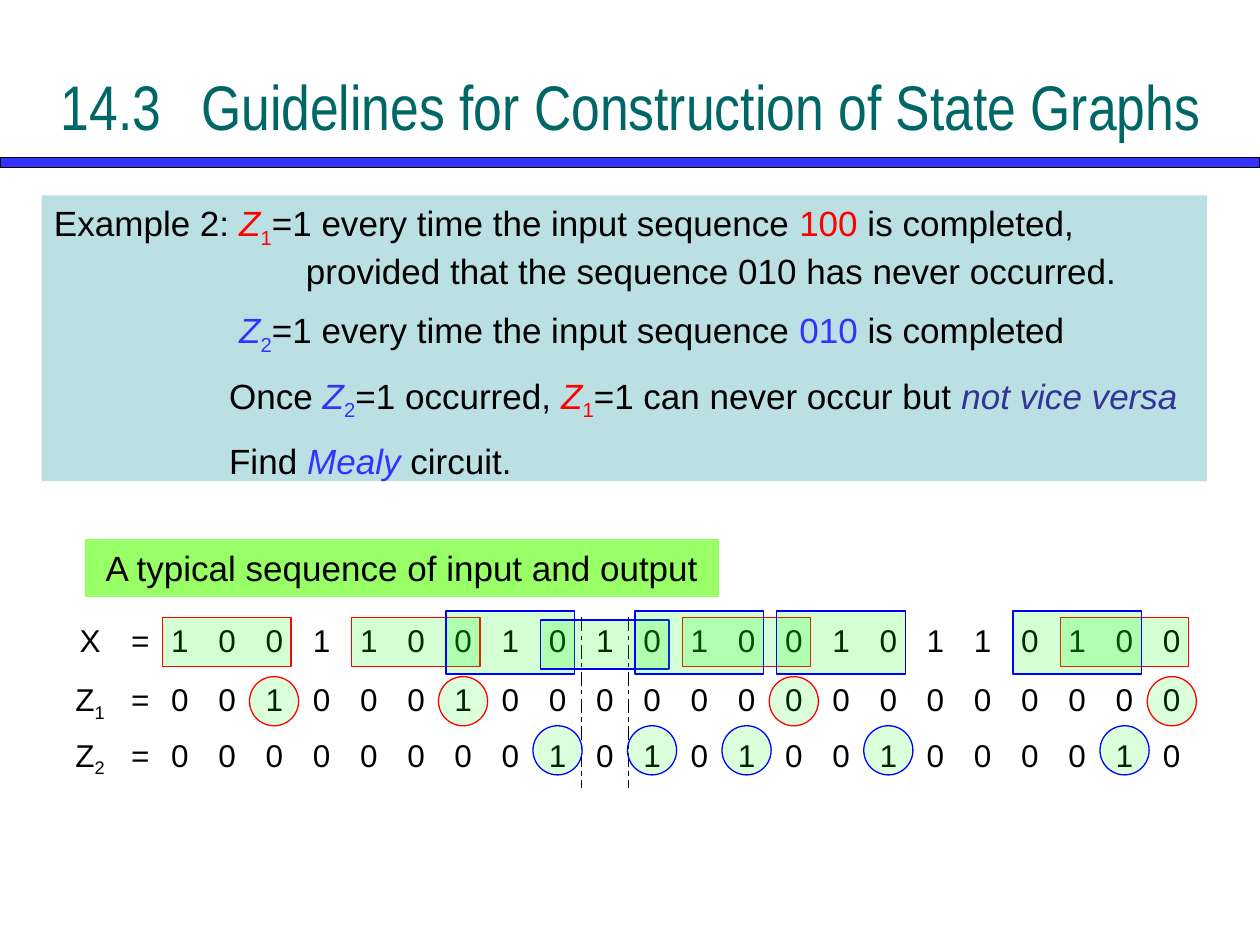
from lxml.etree import SubElement
from pptx import Presentation
from pptx.dml.color import RGBColor
from pptx.enum.shapes import MSO_SHAPE
from pptx.enum.text import MSO_ANCHOR, PP_ALIGN
from pptx.oxml import parse_xml
from pptx.oxml.ns import qn
from pptx.util import Inches, Pt

COLORS = {
    "black": "000000", "white": "FFFFFF", "teal": "006666", "bar": "3333FF",
    "panel": "BBE0E3", "label": "99FF66", "mark": "00FF00", "red": "FF0000",
    "blue": "0000FF", "indigo": "333399",
}
COLS, ROWS = 100, 75
UNIT = Inches(0.1)
BODY = {"name": "Arial", "size": Pt(20)}
DIGIT = {"name": "Arial", "size": Pt(18)}
TITLE = {"name": "Arial Narrow", "size": Pt(36)}

Z1 = [("Z", "red", "i"), ("1", "red", "sub")]
Z2 = [("Z", "bar", "i"), ("2", "bar", "sub")]
EXAMPLE = [
    (20, -20, 0, [("Example 2: ",), *Z1, ("=1 every time the input sequence ",), ("100", "red"),
                  (" is completed,\vprovided that the sequence 010 has never occurred.",)]),
    (14.7, 0, 10, [*Z2, ("=1 every time the input sequence ",), ("010", "bar"), (" is completed",)]),
    (13.9, 0, 10, [("Once ",), *Z2, ("=1 occurred, ",), *Z1, ("=1 can never occur but ",),
                   ("not vice versa", "indigo", "i")]),
    (13.9, 0, 10, [("Find ",), ("Mealy", "bar", "i"), (" circuit.",)]),
]
X = "1001100101010010110100"
SEQUENCES = [
    ([("X",)], X),
    ([("Z",), ("1", "black", "sub")], "0010001000000000000000"),
    ([("Z",), ("2", "black", "sub")], "0000000010101001000010"),
]
TABLE_LEFT, TABLE_TOP = 4.9, 49
HEAD_WIDTHS, STEP = [4.5, 3], 3.75
ROW_HEIGHTS = [4.7, 4, 4]
SPLIT = 10


def rgb(name):
    """Return the named colour."""
    return RGBColor.from_string(COLORS[name])


def grid(*lengths):
    """Turn grid units into slide lengths."""
    return [round(n * UNIT) for n in lengths]


def add_runs(p, runs, fmt):
    """Add (text, colour, style) runs to a paragraph."""
    for text, color, style in ((*run, "black", "")[:3] if len(run) == 1 else (*run, "")[:3] for run in runs):
        for i, part in enumerate(text.split("\v")):
            if i:
                p.add_line_break()
            r = p.add_run()
            r.text = part
            for key, value in {**fmt, "italic": style == "i"}.items():
                setattr(r.font, key, value)
            r.font.color.rgb = rgb(color)
            if style == "sub":
                r.font._element.set("baseline", "-25000")


def add_box(s, at, fill, line=None, kind=MSO_SHAPE.RECTANGLE, alpha=None):
    """Add a filled shape, see-through if alpha is given."""
    sp = s.shapes.add_shape(kind, *grid(*at))
    sp.shadow.inherit = False
    sp.fill.solid()
    sp.fill.fore_color.rgb = rgb(fill)
    if alpha:
        color = sp._element.spPr.find(qn("a:solidFill"))[0]
        SubElement(color, qn("a:alpha")).set("val", str(alpha * 1000))
    if line:
        sp.line.color.rgb = rgb(line)
        sp.line.width = Pt(0.75)
    else:
        sp.line.fill.background()
    return sp


def set_text(sp, runs, fmt, wrap=True):
    """Put one centred line of text in a shape."""
    tf = sp.text_frame
    for key, value in {"word_wrap": wrap, "vertical_anchor": MSO_ANCHOR.MIDDLE}.items():
        setattr(tf, key, value)
    p = tf.paragraphs[0]
    p.alignment = PP_ALIGN.CENTER
    add_runs(p, runs, fmt)


def add_example(s):
    """Add the panel that states the problem."""
    tf = add_box(s, (3.3, 15.5, 92.5, 22.7), "panel").text_frame
    for key, value in {"word_wrap": True, "vertical_anchor": MSO_ANCHOR.TOP}.items():
        setattr(tf, key, value)
    for i, (margin, indent, before, runs) in enumerate(EXAMPLE):
        p = tf.add_paragraph() if i else tf.paragraphs[0]
        p.alignment = PP_ALIGN.LEFT
        p.space_before = Pt(before)
        pPr = p._p.get_or_add_pPr()
        for key, value in zip(("marL", "indent"), grid(margin, indent)):
            pPr.set(key, str(value))
        add_runs(p, runs, BODY)


def set_border(cell, side):
    """Draw a dash-dot border on one side of a cell."""
    ns = "http://schemas.openxmlformats.org/drawingml/2006/main"
    cell._tc.get_or_add_tcPr().insert(0, parse_xml(
        f'<a:{side} xmlns:a="{ns}" w="12700"><a:solidFill><a:srgbClr val="{COLORS["black"]}"/>'
        f'</a:solidFill><a:prstDash val="lgDashDot"/></a:{side}>'))


def add_sequences(s):
    """Add the table of input and output sequences."""
    widths = HEAD_WIDTHS + [STEP] * len(X)
    at = grid(TABLE_LEFT, TABLE_TOP, sum(widths), sum(ROW_HEIGHTS))
    table = s.shapes.add_table(len(SEQUENCES), len(widths), *at).table
    table.first_row = table.horz_banding = False
    table._tbl.tblPr.find(qn("a:tableStyleId")).text = "{2D5ABB26-0587-4C30-8999-92F81FD0307C}"
    for col, width in zip(table.columns, grid(*widths)):
        col.width = width
    for row, height, (name, bits) in zip(table.rows, grid(*ROW_HEIGHTS), SEQUENCES):
        row.height = height
        for i, runs in enumerate([name, [("=",)], *([(bit,)] for bit in bits)]):
            cell = row.cells[i]
            cell.fill.background()
            p = cell.text_frame.paragraphs[0]
            p.alignment = PP_ALIGN.CENTER
            add_runs(p, runs, DIGIT)
            if i in (SPLIT, SPLIT + 1):
                set_border(cell, "lnR" if i == SPLIT else "lnL")


def add_marks(s, pattern, color, top, height, circle_top, nested=()):
    """Frame each match of a pattern and circle the output at its end."""
    left = TABLE_LEFT + sum(HEAD_WIDTHS)
    for i in range(len(X)):
        if X.startswith(pattern, i):
            y, h = (49.2, 3.9) if i in nested else (top, height)
            add_box(s, (left + i * STEP + 0.5, y, 10.2, h), "mark", color, alpha=17)
            add_box(s, (left + (i + 2) * STEP - 0.1, circle_top, 3.9, 3.9), "mark", color,
                    MSO_SHAPE.OVAL, 14)


def main():
    """Build the slide."""
    prs = Presentation()
    prs.slide_width, prs.slide_height = grid(COLS, ROWS)
    s = prs.slides.add_slide(prs.slide_layouts[6])
    add_box(s, (0, 12.5, COLS, 0.8), "bar", "black")
    title = s.shapes.add_textbox(*grid(2, 2.1, 96.1, 12.5))
    set_text(title, [("14.3\t Guidelines for Construction of State Graphs", "teal")], TITLE)
    add_example(s)
    add_sequences(s)
    label = add_box(s, (6.7, 42.7, 50.4, 4.7), "label", "white")
    set_text(label, [("A typical sequence of input and output",)], BODY, wrap=False)
    add_marks(s, "100", "red", 49, 3.9, 53.7)
    add_marks(s, "010", "blue", 48.5, 5, 57.6, nested=(8,))
    prs.save("out.pptx")


if __name__ == "__main__":
    main()
